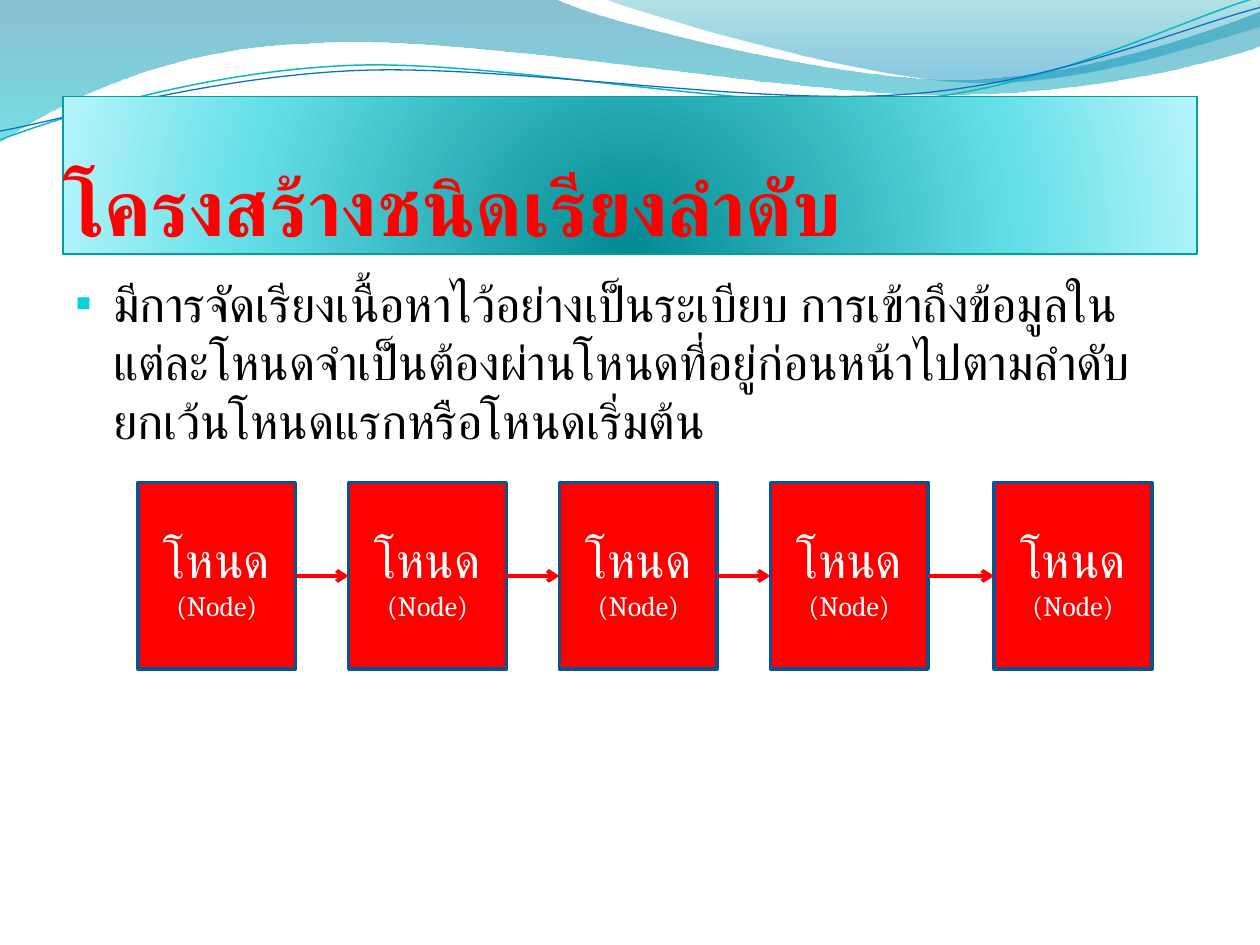
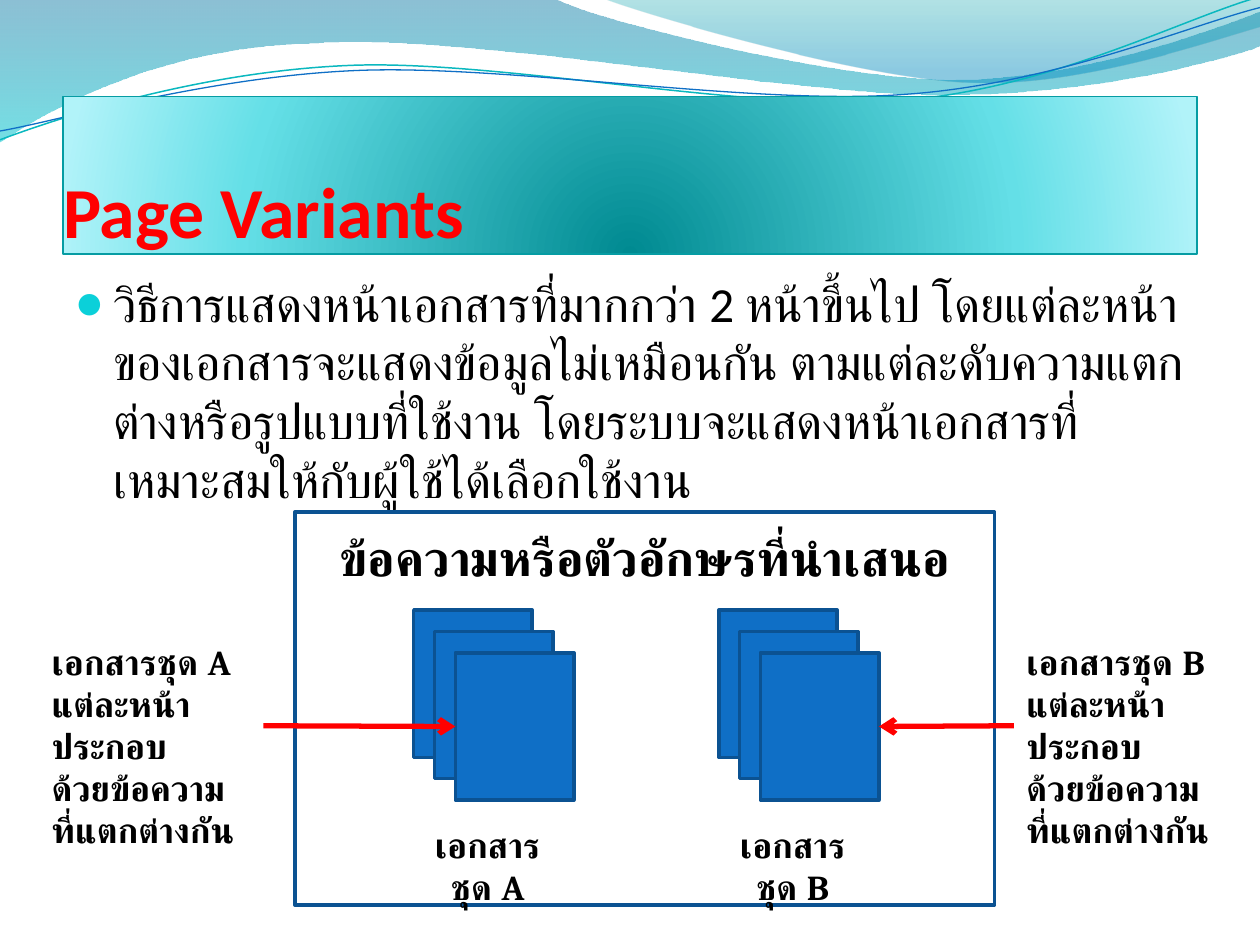
import pptx
import pptx.dml.color
import pptx.enum.shapes
import pptx.enum.text
import pptx.oxml
import pptx.oxml.ns
import pptx.util
from lxml import etree

Cm = pptx.util.Cm
Pt = pptx.util.Pt
RGBColor = pptx.dml.color.RGBColor
ALIGN = pptx.enum.text.PP_ALIGN
ANCHOR = pptx.enum.text.MSO_ANCHOR
CONNECTOR = pptx.enum.shapes.MSO_CONNECTOR
qn = pptx.oxml.ns.qn

RED = RGBColor(0xFF, 0x00, 0x00)
WHITE = RGBColor(0xFF, 0xFF, 0xFF)
BLACK = RGBColor(0x00, 0x00, 0x00)
BLUE = RGBColor(0x0F, 0x6F, 0xC6)
DARK_BLUE = RGBColor(0x0B, 0x52, 0x92)
TEAL = RGBColor(0x0A, 0xB8, 0xBF)
DARK_TEAL = RGBColor(0x06, 0x9C, 0xA3)
BULLET_CYAN = RGBColor(0x0B, 0xD0, 0xD9)

# Gradient stops: position %, colour, opacity %
TITLE_STOPS = [(0, RGBColor(0x00, 0x8A, 0x91), 100),
               (68, RGBColor(0x64, 0xDF, 0xE7), 100),
               (100, RGBColor(0xB1, 0xF3, 0xF9), 100)]
LEFT_WAVE_STOPS = [(0, RGBColor(0x00, 0x74, 0xA1), 45),
                   (100, RGBColor(0x00, 0xC6, 0xCF), 55)]
RIGHT_WAVE_STOPS = [(0, RGBColor(0x00, 0xA1, 0xA9), 30),
                    (80, RGBColor(0x00, 0x8B, 0xBF), 45)]
DOWNWARD = '<a:lin {} ang="5400000" scaled="1"/>'
FROM_BELOW = ('<a:path {} path="circle"><a:fillToRect l="50000" t="130000" '
              'r="50000" b="-30000"/></a:path>')

# Outlines in tenths of the slide width: two numbers end a line, six a Bézier curve
WAVE_UNIT = Cm(2.54)
LEFT_WAVE = [(0, 0), (4.4, -0.01),
             (4.76, 0.17, 6.64, 0.63, 7.58, 0.63), (8.53, 0.63, 9.58, 0.26, 10, 0.09),
             (10.01, 0.36),
             (9.83, 0.44, 8.7, 0.76, 7.46, 0.75), (6.22, 0.75, 3.82, 0.28, 2.57, 0.34),
             (1.29, 0.36, 0.46, 0.83, -0.01, 1.13), (0, 0)]
RIGHT_WAVE = [(4.79, -0.01),
              (5.09, 0.11, 6.82, 0.62, 7.69, 0.65), (8.56, 0.69, 9.61, 0.32, 10, 0.21),
              (10, 0), (4.79, -0.01)]
TEAL_LINE = [(0, 1.11),
             (0.48, 0.93, 1.58, 0.57, 2.77, 0.52), (3.95, 0.47, 5.93, 0.89, 7.13, 0.8),
             (8.33, 0.71, 9.38, 0.15, 9.98, -0.02)]
BLUE_LINE = [(0, 1.04),
             (0.47, 0.96, 1.64, 0.61, 2.83, 0.56), (4.03, 0.51, 5.97, 0.84, 7.17, 0.75),
             (8.36, 0.67, 9.41, 0.21, 10, 0.06)]


def set_gradient(shape, stops, direction):
    shape.fill.gradient()
    gradient = shape.element.spPr.find(qn("a:gradFill"))
    for child in list(gradient):
        gradient.remove(child)
    stop_list = etree.SubElement(gradient, qn("a:gsLst"))
    for position, color, opacity in stops:
        stop = etree.SubElement(stop_list, qn("a:gs"), pos=str(position * 1000))
        color_element = etree.SubElement(stop, qn("a:srgbClr"), val=str(color))
        etree.SubElement(color_element, qn("a:alpha"), val=str(opacity * 1000))
    gradient.append(pptx.oxml.parse_xml(direction.format(pptx.oxml.ns.nsdecls("a"))))


def set_line(shape, color, width):
    shape.line.color.rgb = color
    shape.line.width = Pt(width)


def add_outline(slide, outline, closed):
    """Build a freeform, then join each curve's three points into one Bézier."""
    start, *others = [(round(x * WAVE_UNIT), round(y * WAVE_UNIT))
                      for segment in outline
                      for x, y in zip(segment[::2], segment[1::2])]
    builder = slide.shapes.build_freeform(*start)
    builder.add_line_segments(others, close=closed)
    shape = builder.convert_to_shape()
    shape.shadow.inherit = False
    lines = iter(list(shape.element.iter(qn("a:lnTo"))))
    for segment in outline[1:]:
        first = next(lines)
        if len(segment) == 6:
            curve = etree.Element(qn("a:cubicBezTo"))
            first.addprevious(curve)
            for line in (first, next(lines), next(lines)):
                curve.append(line[0])
                line.getparent().remove(line)
    return shape


def add_waves(slide):
    """Draw the waves and move them to the layout, behind its placeholders."""
    waves = []
    for outline, stops in ((LEFT_WAVE, LEFT_WAVE_STOPS), (RIGHT_WAVE, RIGHT_WAVE_STOPS)):
        wave = add_outline(slide, outline, True)
        set_gradient(wave, stops, DOWNWARD)
        wave.line.fill.background()
        waves.append(wave)
    for outline, color, width in ((TEAL_LINE, TEAL, 0.85), (BLUE_LINE, BLUE, 0.75)):
        strand = add_outline(slide, outline, False)
        strand.fill.background()
        set_line(strand, color, width)
        waves.append(strand)
    layout_tree = slide.slide_layout.shapes.element
    for index, wave in enumerate(waves):
        wave.element.nvSpPr.cNvPr.set("id", str(101 + index))
        layout_tree.insert(2 + index, wave.element)


def format_paragraph(paragraph, size, color, name="Cambria", bold=False, align=ALIGN.LEFT):
    paragraph.alignment = align
    paragraph.font.size = Pt(size)
    paragraph.font.name = name
    paragraph.font.bold = bold
    paragraph.font.color.rgb = color


def format_title(slide, text, size):
    title = slide.shapes.title
    title.left, title.top, title.width, title.height = Cm(1.27), Cm(1.95), Cm(22.86), Cm(3.17)
    set_gradient(title, TITLE_STOPS, FROM_BELOW)
    set_line(title, DARK_TEAL, 0.75)
    title.shadow.inherit = False
    frame = title.text_frame
    frame.text = text
    frame.auto_size = pptx.enum.text.MSO_AUTO_SIZE.NONE
    frame.vertical_anchor = ANCHOR.BOTTOM
    frame.margin_left = frame.margin_right = frame.margin_bottom = 0
    frame.margin_top = Cm(0.13)
    paragraph = frame.paragraphs[0]
    format_paragraph(paragraph, size, RED, "Calibri", True)
    paragraph.line_spacing = 0.9


def add_text(slide, left, top, width, height, lines, size, **style):
    box = slide.shapes.add_textbox(Cm(left), Cm(top), Cm(width), Cm(height))
    box.text_frame.word_wrap = True
    box.text_frame.text = "\n".join(lines)
    for paragraph in box.text_frame.paragraphs:
        format_paragraph(paragraph, size, BLACK, **style)
    return box


def add_body(slide, text, bullet):
    body = add_text(slide, 1.27, 5.38, 22.86, 12.19, [text], 28, name="Calibri")
    paragraph = body.text_frame.paragraphs[0]
    paragraph.space_before = Pt(5.6)
    properties = paragraph._p.get_or_add_pPr()
    properties.set("marL", str(Cm(0.76)))
    properties.set("indent", str(-Cm(0.76)))
    bullet_color = etree.Element(qn("a:buClr"))
    etree.SubElement(bullet_color, qn("a:srgbClr"), val=str(BULLET_CYAN))
    defaults = properties.find(qn("a:defRPr"))
    for element in (bullet_color,
                    etree.Element(qn("a:buSzPct"), val="95000"),
                    etree.Element(qn("a:buFont"), typeface="Calibri"),
                    etree.Element(qn("a:buChar"), char=bullet)):
        defaults.addprevious(element)


def add_rectangle(slide, left, top, width, height, fill=None):
    rectangle = slide.shapes.add_shape(pptx.enum.shapes.MSO_SHAPE.RECTANGLE,
                                       Cm(left), Cm(top), Cm(width), Cm(height))
    rectangle.shadow.inherit = False
    if fill is None:
        rectangle.fill.background()
    else:
        rectangle.fill.solid()
        rectangle.fill.fore_color.rgb = fill
    set_line(rectangle, DARK_BLUE, 2)
    return rectangle


def add_arrow(slide, kind, start, start_side, end, end_side, width):
    arrow = slide.shapes.add_connector(kind, 0, 0, 0, 0)
    arrow.begin_connect(start, start_side)
    arrow.end_connect(end, end_side)
    set_line(arrow, RED, width)
    properties = arrow.element.spPr
    etree.SubElement(properties.find(qn("a:ln")), qn("a:tailEnd"), type="arrow")
    etree.SubElement(properties, qn("a:effectLst"))


def add_node_chain(slide, left, top):
    width, height = 3.18, 3.76
    previous = None
    for gap_after in (1.07, 1.07, 1.07, 1.33, 0):
        node = add_rectangle(slide, left, top, width, height, RED)
        frame = node.text_frame
        frame.text = "โหนด\n(Node)"
        frame.vertical_anchor = ANCHOR.MIDDLE
        for paragraph, size in zip(frame.paragraphs, (28, 16)):
            format_paragraph(paragraph, size, WHITE, align=ALIGN.CENTER)
        if previous is not None:
            add_arrow(slide, CONNECTOR.ELBOW, previous, 3, node, 1, 2.25)
        previous = node
        left += width + gap_after


def add_document_stack(slide, left, top, letter):
    """Draw three overlapping pages with a label; return the front page."""
    for index in range(3):
        page = add_rectangle(slide, left + 0.42 * index, top + 0.43 * index, 2.39, 2.97, BLUE)
    add_text(slide, left - 0.2, top + 4.17, 3.38, 1.12, [f"เอกสารชุด {letter}"], 20,
             bold=True, align=ALIGN.CENTER)
    return page


def add_side_note(slide, left, top, letter):
    lines = [f"เอกสารชุด {letter}", "แต่ละหน้าประกอบ", "ด้วยข้อความ", "ที่แตกต่างกัน"]
    return add_text(slide, left, top, 4.52, 3.68, lines, 20, bold=True)


def add_variants_diagram(slide, left, top):
    add_text(slide, left + 0.2, top + 0.18, 13.69, 1.45, ["ข้อความหรือตัวอักษรที่นำเสนอ"], 28,
             bold=True, align=ALIGN.CENTER)
    add_rectangle(slide, left, top, 14.1, 7.93)
    for letter, stack_left, note_left, note_side, page_side in (
            ("A", 2.39, -5.16, 3, 1), ("B", 8.54, 14.49, 1, 3)):
        page = add_document_stack(slide, left + stack_left, top + 1.98, letter)
        note = add_side_note(slide, left + note_left, top + 2.47, letter)
        add_arrow(slide, CONNECTOR.STRAIGHT, note, note_side, page, page_side, 3)


def add_content_slide(presentation, title, title_size, body, bullet):
    slide = presentation.slides.add_slide(presentation.slide_layouts.get_by_name("Title Only"))
    format_title(slide, title, title_size)
    add_body(slide, body, bullet)
    return slide


def main():
    presentation = pptx.Presentation()
    presentation.slide_width, presentation.slide_height = Cm(25.4), Cm(19.05)

    sequence_slide = add_content_slide(
        presentation, "โครงสร้างชนิดเรียงลำดับ", 45,
        "มีการจัดเรียงเนื้อหาไว้อย่างเป็นระเบียบ การเข้าถึงข้อมูลในแต่ละโหนดจำเป็นต้องผ่าน"
        "โหนดที่อยู่ก่อนหน้าไปตามลำดับ ยกเว้นโหนดแรกหรือโหนดเริ่มต้น", "▪")
    add_waves(sequence_slide)
    add_node_chain(sequence_slide, 2.78, 9.73)

    variants_slide = add_content_slide(
        presentation, "Page Variants", 41,
        "วิธีการแสดงหน้าเอกสารที่มากกว่า 2 หน้าขึ้นไป โดยแต่ละหน้าของเอกสารจะแสดงข้อมูล"
        "ไม่เหมือนกัน ตามแต่ละดับความแตกต่างหรือรูปแบบที่ใช้งาน "
        "โดยระบบจะแสดงหน้าเอกสารที่เหมาะสมให้กับผู้ใช้ได้เลือกใช้งาน", "●")
    add_variants_diagram(variants_slide, 5.95, 10.32)

    presentation.save("out.pptx")


if __name__ == "__main__":
    main()
